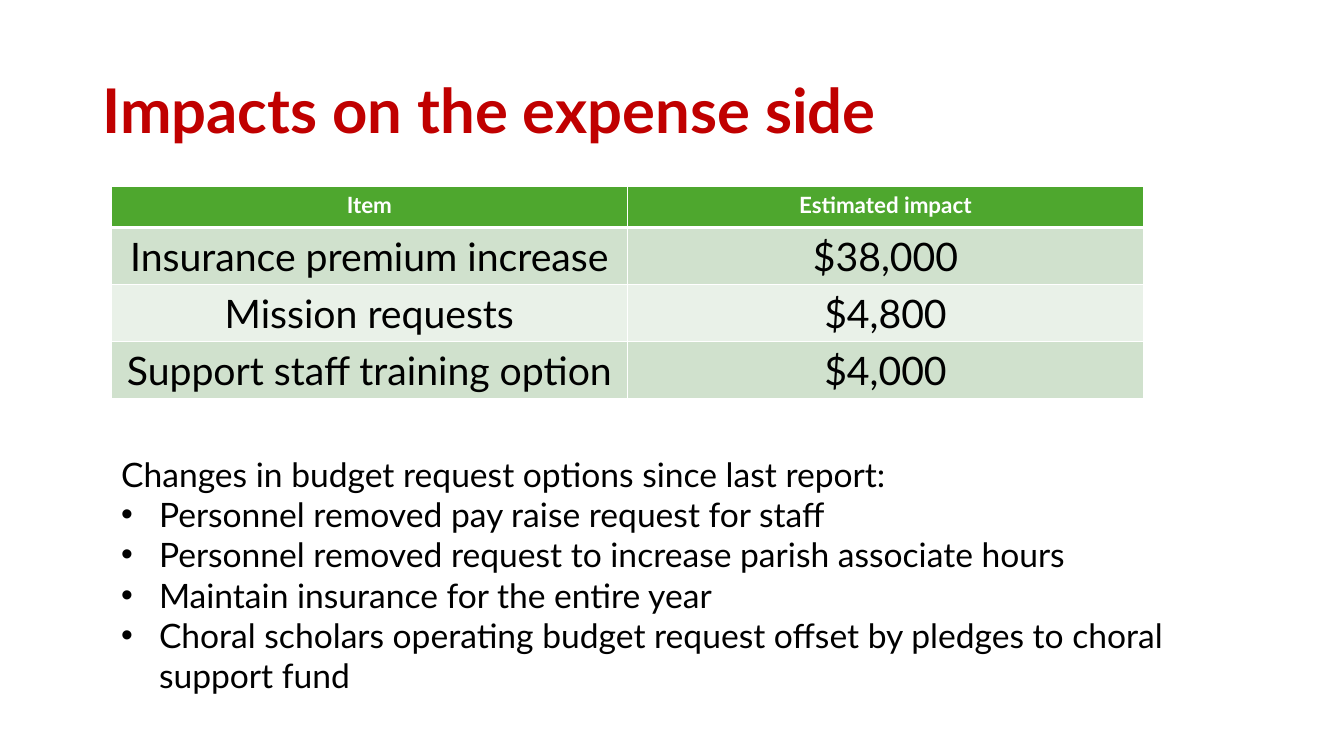
"""Build the slide on budget impacts on the expense side."""
from lxml.etree import SubElement
from pptx import Presentation
from pptx.dml.color import RGBColor
from pptx.enum.text import MSO_ANCHOR, PP_ALIGN
from pptx.oxml import parse_xml
from pptx.oxml.ns import nsdecls, qn
from pptx.util import Pt


def color(hex_string):
    return RGBColor.from_string(hex_string)


def add_text(paragraph, text, size, hex_string, bold=False):
    run = paragraph.add_run()
    run.text = text
    run.font.name = "Lato"
    run.font.size = Pt(size)
    run.font.bold = bold
    run.font.color.rgb = color(hex_string)


deck = Presentation()
deck.slide_width, deck.slide_height = Pt(960), Pt(540)
slide = deck.slides.add_slide(deck.slide_layouts[6])

title = slide.shapes.add_textbox(Pt(66), Pt(28.75), Pt(828), Pt(104.4)).text_frame
title.word_wrap = True
title.vertical_anchor = MSO_ANCHOR.MIDDLE
title.paragraphs[0].line_spacing = 0.9
add_text(title.paragraphs[0], "Impacts on the expense side", 44, "C00000", True)

impacts = [
    ("Item", "Estimated impact"),
    ("Insurance premium increase", "$38,000"),
    ("Mission requests", "$4,800"),
    ("Support staff training option", "$4,000"),
]
row_fills = ["4EA72E", "D0E1CD", "E9F1E8", "D0E1CD"]
row_heights = [29.2, 40.9, 40.9, 40.9]
impact_table = slide.shapes.add_table(
    len(impacts), 2, Pt(79.5), Pt(133.2), Pt(737.3), Pt(sum(row_heights))).table
for column in impact_table.columns:
    column.width = Pt(368.65)

for row, entries in enumerate(impacts):
    impact_table.rows[row].height = Pt(row_heights[row])
    header = row == 0
    for col, entry in enumerate(entries):
        cell = impact_table.cell(row, col)
        cell.fill.solid()
        cell.fill.fore_color.rgb = color(row_fills[row])
        paragraph = cell.text_frame.paragraphs[0]
        paragraph.alignment = PP_ALIGN.CENTER
        add_text(paragraph, entry, 16 if header else 28,
                 "FFFFFF" if header else "000000", header)
        borders = {"lnL": 1, "lnR": 1, "lnT": 3 if row == 1 else 1, "lnB": 3 if header else 1}
        for position, (side, width) in enumerate(borders.items()):
            cell._tc.get_or_add_tcPr().insert(position, parse_xml(
                f'<a:{side} {nsdecls("a")} w="{Pt(width)}"><a:solidFill>'
                f'<a:srgbClr val="FFFFFF"/></a:solidFill></a:{side}>'))

changes = [
    "Personnel removed pay raise request for staff",
    "Personnel removed request to increase parish associate hours",
    "Maintain insurance for the entire year",
    "Choral scholars operating budget request offset by pledges to choral support fund",
]
notice = slide.shapes.add_textbox(Pt(79.5), Pt(320.4), Pt(801.4), Pt(181.4)).text_frame
notice.word_wrap = True
add_text(notice.paragraphs[0], "Changes in budget request options since last report:", 24, "000000")
for change in changes:
    paragraph = notice.add_paragraph()
    properties = paragraph._p.get_or_add_pPr()
    properties.set("marL", str(Pt(27)))
    properties.set("indent", str(Pt(-27)))
    SubElement(properties, qn("a:buFont")).set("typeface", "Arial")
    SubElement(properties, qn("a:buChar")).set("char", "•")
    add_text(paragraph, change, 24, "000000")

deck.save("out.pptx")
